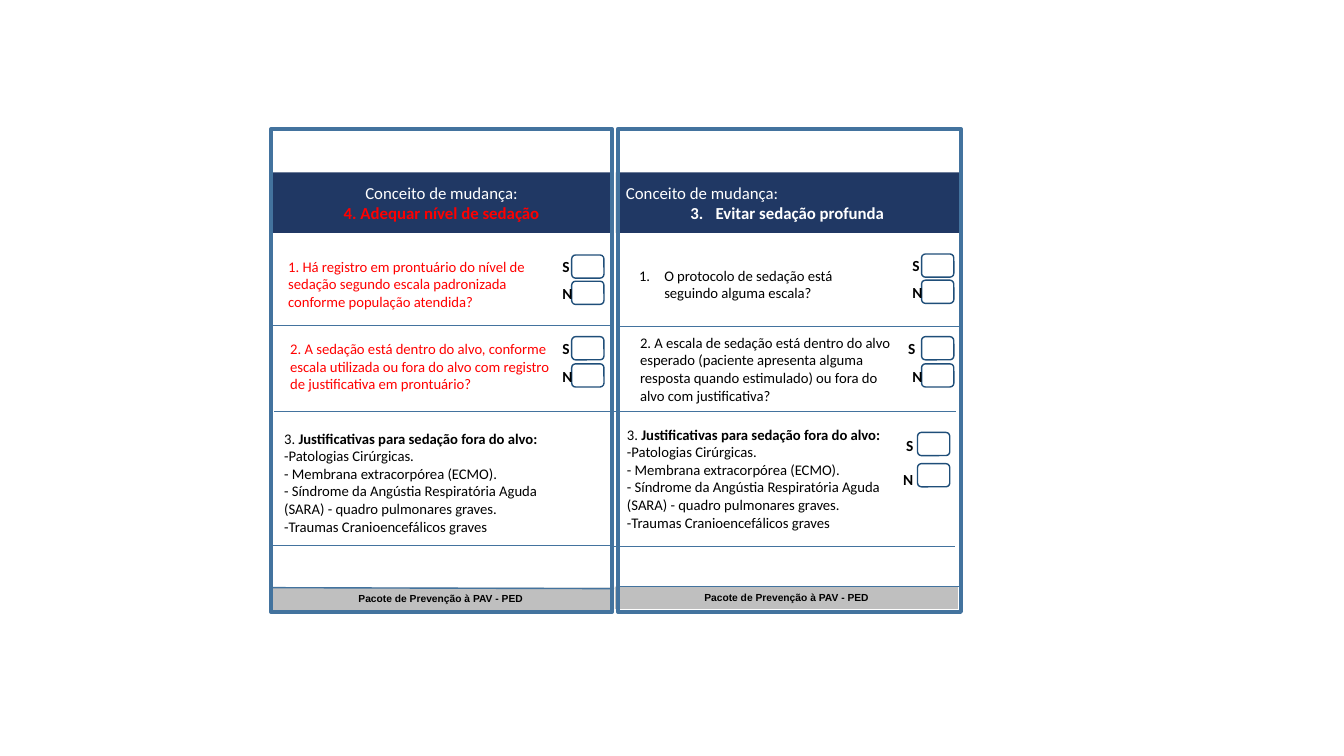
from lxml.etree import SubElement
from pptx import Presentation
from pptx.dml.color import RGBColor
from pptx.enum.shapes import MSO_CONNECTOR, MSO_SHAPE
from pptx.enum.text import MSO_ANCHOR, MSO_AUTO_SIZE, PP_ALIGN
from pptx.oxml.ns import qn
from pptx.util import Inches, Pt

NAVY = "203864"
STEEL = "43739E"
BOX_BLUE = "1F4E79"
GREY = "BFBFBF"
RED = "FF0000"
BLACK = "000000"
WHITE = "FFFFFF"
JUSTIFICATIONS = [
    "-Patologias Cirúrgicas.",
    "- Membrana extracorpórea (ECMO).",
    "- Síndrome da Angústia\u00a0Respiratória Aguda (SARA) - quadro pulmonares graves.",
    "-Traumas Cranioencefálicos graves",
]


def rgb(color):
    return RGBColor.from_string(color)


def write(holder, text, size=10.5, color=BLACK, bold=False, font="Calibri",
          align=PP_ALIGN.LEFT, number=None, same_line=False):
    frame = holder.text_frame
    paragraph = frame.paragraphs[-1]
    if paragraph.runs and not same_line:
        paragraph = frame.add_paragraph()
    paragraph.alignment = align
    if number:
        properties = paragraph._p.get_or_add_pPr()
        properties.set("marL", str(Inches(0.25)))
        properties.set("indent", str(Inches(-0.25)))
        SubElement(properties, qn("a:buFont"), typeface="+mj-lt")
        SubElement(properties, qn("a:buAutoNum"), type="arabicPeriod", startAt=str(number))
    run = paragraph.add_run()
    run.text = text
    run.font.size = Pt(size)
    run.font.name = font
    run.font.bold = bold
    run.font.color.rgb = rgb(color)


def add_panel(slide, left, top, width, height, fill=None, line=None, weight=1,
              kind=MSO_SHAPE.RECTANGLE):
    panel = slide.shapes.add_shape(kind, Inches(left), Inches(top), Inches(width), Inches(height))
    panel.shadow.inherit = False
    if fill:
        panel.fill.solid()
        panel.fill.fore_color.rgb = rgb(fill)
    else:
        panel.fill.background()
    if line:
        panel.line.color.rgb = rgb(line)
        panel.line.width = Pt(weight)
    else:
        panel.line.fill.background()
    panel.text_frame.word_wrap = True
    panel.text_frame.vertical_anchor = MSO_ANCHOR.MIDDLE
    return panel


def add_label(slide, left, top, width, height):
    label = slide.shapes.add_textbox(Inches(left), Inches(top), Inches(width), Inches(height))
    label.text_frame.word_wrap = True
    label.text_frame.vertical_anchor = MSO_ANCHOR.MIDDLE
    return label


def add_rule(slide, left, top, end_top=None):
    rule = slide.shapes.add_connector(
        MSO_CONNECTOR.STRAIGHT, Inches(left), Inches(top),
        Inches(left + 3.39), Inches(end_top or top))
    rule.line.color.rgb = rgb(STEEL)
    rule.line.width = Pt(1)
    SubElement(rule._element.spPr, qn("a:effectLst"))


def add_footer(slide, left, top):
    footer = add_panel(slide, left, top, 3.4, 0.22, fill=GREY)
    footer.text_frame.vertical_anchor = MSO_ANCHOR.TOP
    footer.text_frame.auto_size = MSO_AUTO_SIZE.SHAPE_TO_FIT_TEXT
    write(footer, "Pacote de Prevenção à PAV - PED", size=7.3, bold=True,
          font="Arial", align=PP_ALIGN.CENTER)


def add_header(slide, left, concept, color, align, number=None):
    header = add_panel(slide, left, 1.71, 3.4, 0.6, fill=NAVY)
    write(header, "Conceito de mudança:", size=12, color=WHITE, align=align)
    write(header, concept, size=12, color=color, bold=True,
          align=PP_ALIGN.CENTER, number=number)


def add_question(slide, place, text, color=BLACK, number=None):
    write(add_label(slide, *place), text, color=color, number=number)


def add_justifications(slide, left, top):
    reasons = add_label(slide, left, top, 2.88, 1.43)
    reasons.text_frame.margin_bottom = Inches(0.23)
    write(reasons, "3. ")
    write(reasons, "Justificativas para sedação fora do alvo:", bold=True, same_line=True)
    for reason in JUSTIFICATIONS:
        write(reasons, reason)


def add_answer(slide, letter, box_left, box_top, letter_left, letter_top):
    add_panel(slide, box_left, box_top, 0.32, 0.23, line=BOX_BLUE, kind=MSO_SHAPE.ROUNDED_RECTANGLE)
    label = add_label(slide, letter_left, letter_top, 0.24, 0.17 if letter == "S" else 0.14)
    write(label, letter, size=11, bold=True, align=PP_ALIGN.CENTER)


def main():
    prs = Presentation()
    prs.slide_width = Inches(13.33)
    prs.slide_height = Inches(7.5)
    slide = prs.slides.add_slide(prs.slide_layouts[6])

    add_footer(slide, 2.67, 5.83)
    add_footer(slide, 6.1, 5.82)
    add_header(slide, 2.68, "4. Adequar nível de sedação", RED, PP_ALIGN.CENTER)
    add_header(slide, 6.11, "Evitar sedação profunda", WHITE, PP_ALIGN.LEFT, number=3)
    for left, width in ((2.69, 3.38), (6.13, 3.4)):
        add_panel(slide, left, 1.28, width, 4.79, line=STEEL, weight=3)

    add_question(slide, (2.76, 2.52, 2.65, 0.59),
                 "1. Há registro em prontuário do nível de sedação segundo escala "
                 "padronizada conforme população atendida?", RED)
    add_question(slide, (2.78, 3.31, 2.87, 0.65),
                 "2. A sedação está dentro do alvo, conforme escala utilizada ou fora "
                 "do alvo com registro de justificativa em prontuário?", RED)
    add_question(slide, (6.24, 2.52, 2.7, 0.6),
                 "O protocolo de sedação está seguindo\u00a0alguma escala?", number=1)
    add_question(slide, (6.25, 3.33, 2.97, 0.66),
                 "2. A escala de sedação está dentro do alvo esperado (paciente apresenta "
                 "alguma resposta\u00a0quando estimulado) ou fora do alvo\u00a0com justificativa?")
    add_justifications(slide, 2.72, 4.16)
    add_justifications(slide, 6.12, 4.12)

    answers = [
        ("S", 5.67, 2.53, 5.48, 2.56), ("N", 5.67, 2.79, 5.48, 2.84),
        ("S", 5.67, 3.34, 5.48, 3.37), ("N", 5.67, 3.61, 5.48, 3.66),
        ("S", 9.14, 2.52, 8.95, 2.55), ("N", 9.14, 2.78, 8.95, 2.83),
        ("S", 9.14, 3.34, 8.91, 3.37), ("N", 9.14, 3.61, 8.95, 3.66),
        ("S", 9.1, 4.29, 8.89, 4.33), ("N", 9.1, 4.6, 8.86, 4.69),
    ]
    for answer in answers:
        add_answer(slide, *answer)

    rules = [(2.69, 3.23), (6.12, 3.24), (2.72, 4.08), (6.09, 4.08),
             (2.67, 5.41), (6.08, 5.42), (2.7, 5.83, 5.84), (6.14, 5.82)]
    for rule in rules:
        add_rule(slide, *rule)

    prs.save("out.pptx")


if __name__ == "__main__":
    main()
